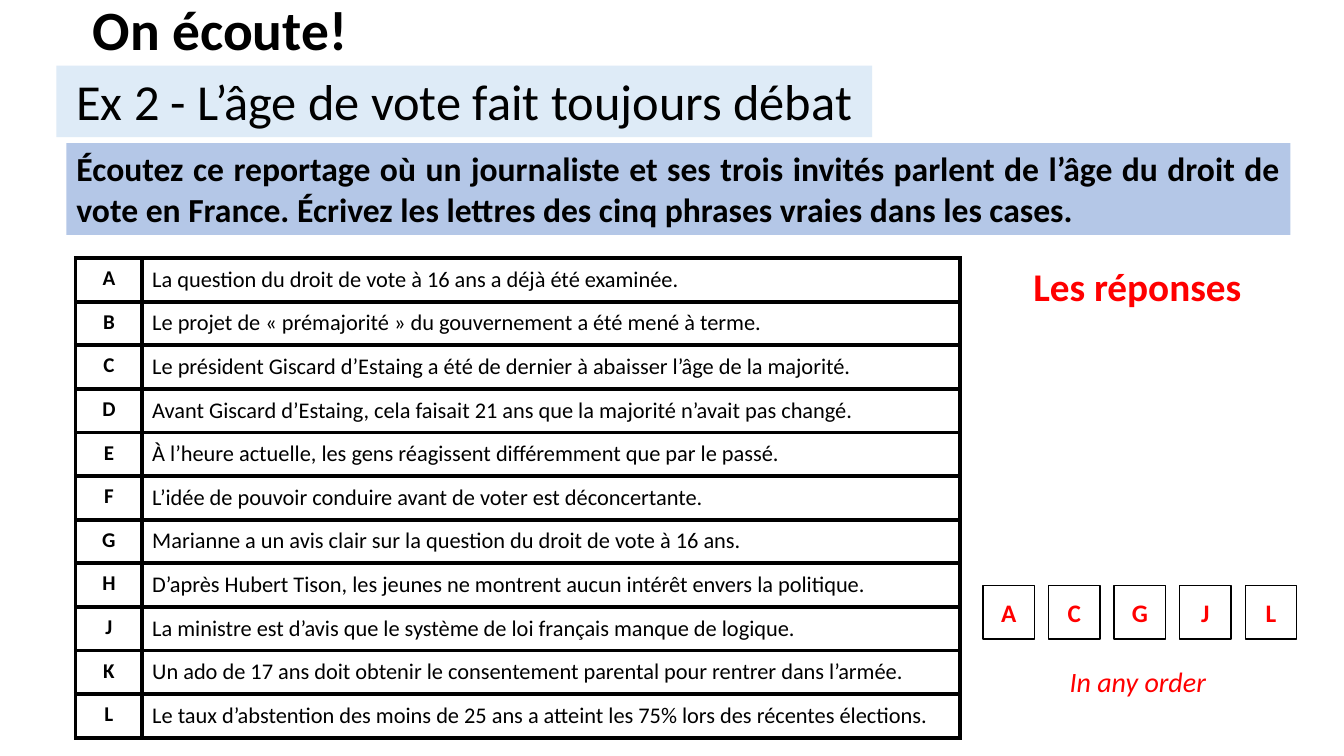
from collections import namedtuple
from dataclasses import dataclass

from lxml import etree
from pptx import Presentation
from pptx import util as u
from pptx.dml.color import RGBColor
from pptx.enum import shapes, text
from pptx.oxml import ns

Box = namedtuple("Box", "x y w h")


@dataclass(frozen=True)
class Theme:
    font: str = "Calibri"
    ink: str = "000000"
    paper: str = "FFFFFF"
    answer: str = "FF0000"
    banner: str = "DEEBF7"
    task: str = "B4C7E7"
    title_size: float = 39.6
    banner_size: float = 36
    heading_size: float = 28
    task_size: float = 24
    note_size: float = 20
    answer_size: float = 18
    sentence_size: float = 16
    letter_size: float = 15
    border: float = 3


T = Theme()
LEFT, CENTER, JUSTIFY = (
    text.PP_ALIGN.LEFT,
    text.PP_ALIGN.CENTER,
    text.PP_ALIGN.JUSTIFY,
)
MIDDLE = text.MSO_ANCHOR.MIDDLE

SENTENCES = {
    "A": "La question du droit de vote à 16 ans a déjà été examinée.",
    "B": "Le projet de « prémajorité » du gouvernement a été mené à terme.",
    "C": "Le président Giscard d’Estaing a été de dernier à abaisser l’âge de la majorité.",
    "D": "Avant Giscard d’Estaing, cela faisait 21 ans que la majorité n’avait pas changé.",
    "E": "À l’heure actuelle, les gens réagissent différemment que par le passé.",
    "F": "L’idée de pouvoir conduire avant de voter est déconcertante.",
    "G": "Marianne a un avis clair sur la question du droit de vote à 16 ans.",
    "H": "D’après Hubert Tison, les jeunes ne montrent aucun intérêt envers la politique.",
    "J": "La ministre est d’avis que le système de loi français manque de logique.",
    "K": "Un ado de 17 ans doit obtenir le consentement parental pour rentrer dans l’armée.",
    "L": "Le taux d’abstention des moins de 25 ans a atteint les 75% lors des récentes élections.",
}
TASK = (
    "Écoutez ce reportage où un journaliste et ses trois invités parlent de l’âge "
    "du droit de vote en France. Écrivez les lettres des cinq phrases vraies dans les cases."
)


def rgb(color):
    return RGBColor.from_string(color)


def write(tf, words, size, color=T.ink, align=LEFT, spacing=1.0, **style):
    p = tf.paragraphs[0]
    p.alignment = align
    p.line_spacing = spacing
    r = p.add_run()
    r.text = words
    r.font.color.rgb = rgb(color)
    font = {"name": T.font, "size": u.Pt(size), "bold": False, **style}
    for name, value in font.items():
        setattr(r.font, name, value)


def add_label(s, box, words, size, wrap=False, anchor=None, **style):
    tf = s.shapes.add_textbox(*map(u.Inches, box)).text_frame
    tf.word_wrap = wrap
    tf.vertical_anchor = anchor
    write(tf, words, size, **style)


def add_panel(s, box, words, size, fill, line=None, anchor=text.MSO_ANCHOR.TOP, **style):
    sp = s.shapes.add_shape(shapes.MSO_SHAPE.RECTANGLE, *map(u.Inches, box))
    sp.shadow.inherit = False
    sp.fill.solid()
    sp.fill.fore_color.rgb = rgb(fill)
    if line:
        sp.line.color.rgb = rgb(line)
        sp.line.width = u.Pt(1)
    else:
        sp.line.fill.background()
    tf = sp.text_frame
    tf.word_wrap = True
    tf.vertical_anchor = anchor
    write(tf, words, size, **style)


def add_borders(cell):
    tc_pr = cell._tc.get_or_add_tcPr()
    for i, side in enumerate(("lnL", "lnR", "lnT", "lnB")):
        ln = etree.Element(ns.qn(f"a:{side}"), w=str(u.Pt(T.border)))
        fill = etree.SubElement(ln, ns.qn("a:solidFill"))
        etree.SubElement(fill, ns.qn("a:srgbClr"), val=T.ink)
        tc_pr.insert(i, ln)


def add_header(s, box):
    x, y, w, h = box
    add_label(s, Box(x + 0.26, y, 3.97, 0.65), "On écoute!", T.title_size,
              wrap=True, anchor=MIDDLE, spacing=0.9, bold=True)
    add_panel(s, Box(x + 0.1, y + 1.42, w - 0.1, h - 1.42), TASK, T.task_size,
              T.task, align=JUSTIFY, bold=True)
    add_panel(s, Box(x, y + 0.65, 8.09, 0.71),
              "Ex 2 - L’âge de vote fait toujours débat", T.banner_size,
              T.banner, align=CENTER)


def add_sentences(s, box):
    letter_width = 0.66
    frame = s.shapes.add_table(len(SENTENCES), 2, *map(u.Inches, box))
    table = frame.table
    table.first_row = table.horz_banding = False
    for column, width in zip(table.columns, (letter_width, box.w - letter_width)):
        column.width = u.Inches(width)
    formats = (
        {"size": T.letter_size, "align": CENTER, "bold": True},
        {"size": T.sentence_size},
    )
    for row, entry in zip(table.rows, SENTENCES.items()):
        for cell, words, style in zip(row.cells, entry, formats):
            cell.fill.solid()
            cell.fill.fore_color.rgb = rgb(T.paper)
            add_borders(cell)
            write(cell.text_frame, words, spacing=1.1, **style)


def add_answers(s, box):
    x, y, w, h = box
    side, pitch = 0.51, (w - 0.51) / 4
    add_label(s, Box(x + 0.4, y, 2.29, 0.57), "Les réponses", T.heading_size,
              color=T.answer, bold=True)
    for i, letter in enumerate("ACGJL"):
        add_panel(s, Box(x + i * pitch, y + 3.26, side, 0.53), letter,
                  T.answer_size, T.paper, line=T.ink, anchor=MIDDLE,
                  color=T.answer, align=CENTER, bold=True)
    add_label(s, Box(x + 0.76, y + h - 0.44, 1.64, 0.44), "In any order",
              T.note_size, color=T.answer, italic=True)


def main():
    prs = Presentation()
    prs.slide_width, prs.slide_height = u.Inches(13.33), u.Inches(7.5)
    s = prs.slides.add_slide(prs.slide_layouts[6])
    add_header(s, Box(0.56, 0, 12.24, 2.33))
    add_sentences(s, Box(0.75, 2.56, 8.77, 4.76))
    add_answers(s, Box(9.75, 2.55, 3.11, 4.43))
    prs.save("out.pptx")


if __name__ == "__main__":
    main()
